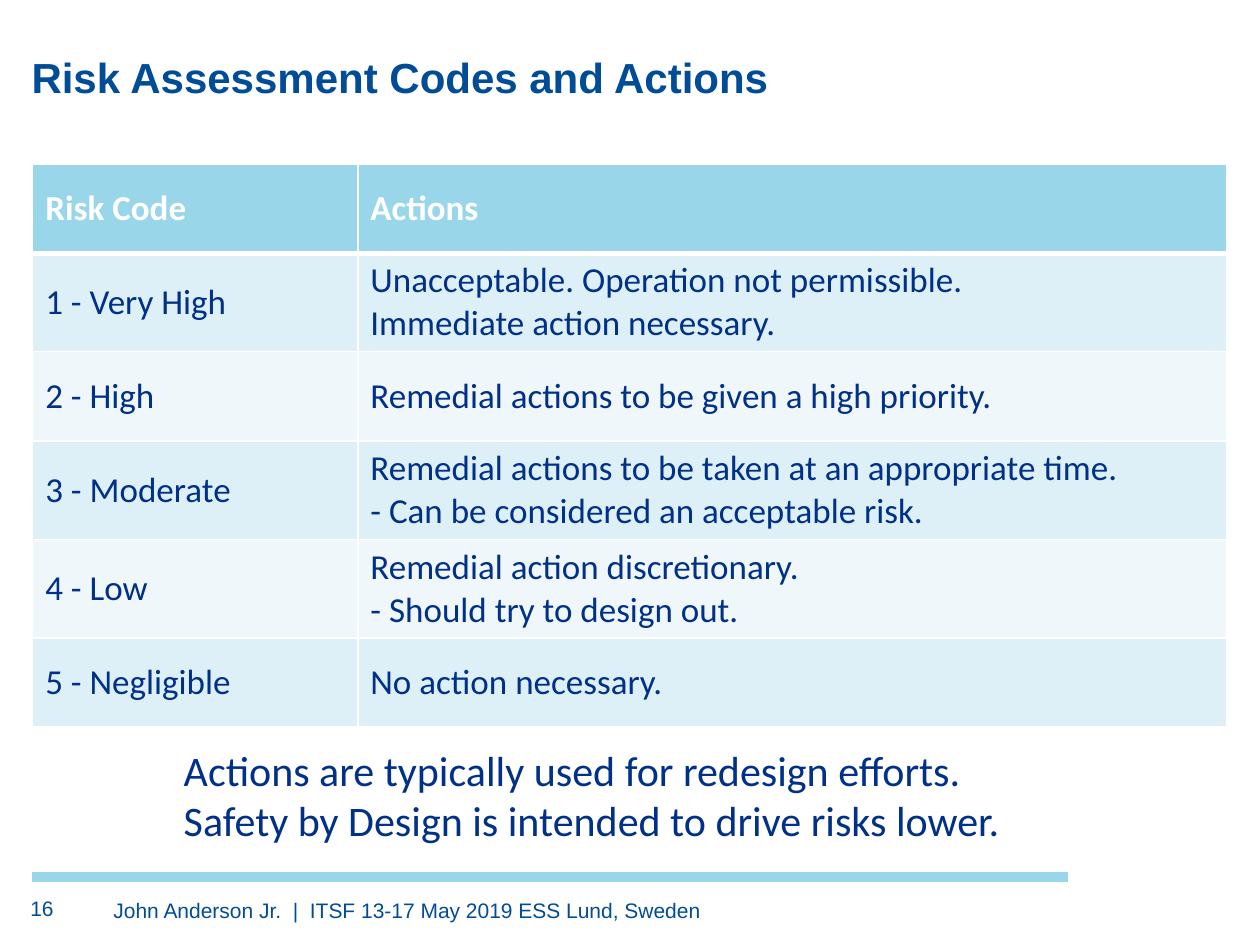
from lxml import etree
from pptx import Presentation
from pptx.dml.color import RGBColor
from pptx.enum.shapes import MSO_CONNECTOR
from pptx.enum.text import MSO_ANCHOR, MSO_AUTO_SIZE, PP_ALIGN
from pptx.oxml.ns import qn
from pptx.util import Inches, Pt

STRAIGHT = MSO_CONNECTOR.STRAIGHT
MIDDLE, BOTTOM = MSO_ANCHOR.MIDDLE, MSO_ANCHOR.BOTTOM
LEFT = PP_ALIGN.LEFT
NO_FIT, GROW = MSO_AUTO_SIZE.NONE, MSO_AUTO_SIZE.SHAPE_TO_FIT_TEXT

BLUE, NAVY, SKY, WHITE = "004C97", "003087", "99D6EA", "FFFFFF"
BANDS = ["DEF0F7", "EFF7FB"]


def rgb(hex_code):
    return RGBColor.from_string(hex_code)


def write(frame, text, size, font, color, bold=False, inset=None):
    frame.text = text
    frame.word_wrap = True
    if inset is not None:
        frame.margin_left = frame.margin_right = inset
        frame.margin_top = frame.margin_bottom = inset
    for paragraph in frame.paragraphs:
        paragraph.alignment = LEFT
        paragraph.font.size = Pt(size)
        paragraph.font.name = font
        paragraph.font.bold = bold
        paragraph.font.color.rgb = rgb(color)


prs = Presentation()
prs.slide_width, prs.slide_height = Inches(10), Inches(7.5)
slide = prs.slides.add_slide(prs.slide_layouts[5])
margin, content_width = Inches(0.25), Inches(9.48)

# Footer rule
rule = slide.shapes.add_connector(STRAIGHT, margin, Inches(6.96), Inches(8.48), Inches(6.96))
rule.line.color.rgb = rgb(SKY)
rule.line.width = Pt(6)
etree.SubElement(rule._element.spPr, qn("a:effectLst"))

# Title
title = slide.shapes.title
title.left, title.top = margin, Inches(0.11)
title.width, title.height = content_width, Inches(0.7)
write(title.text_frame, "Risk Assessment Codes and Actions", 24, "Arial", BLUE, True, 0)
title.text_frame.vertical_anchor = BOTTOM
title.text_frame.auto_size = NO_FIT

# Risk table: \v breaks a line, \n starts a paragraph
risks = [
    ("Risk Code", "Actions"),
    ("1 - Very High", "Unacceptable. Operation not permissible.\vImmediate action necessary."),
    ("2 - High", "Remedial actions to be given a high priority."),
    ("3 - Moderate", "Remedial actions to be taken at an appropriate time.\v"
                     "- Can be considered an acceptable risk."),
    ("4 - Low", "Remedial action discretionary.\n- Should try to design out."),
    ("5 - Negligible", "No action necessary."),
]
row_height = Inches(0.71)
table = slide.shapes.add_table(len(risks), 2, Inches(0.26), Inches(1.3),
                               content_width, row_height * len(risks)).table
table.columns[0].width = Inches(2.58)
table.columns[1].width = Inches(6.9)
for r, risk in enumerate(risks):
    table.rows[r].height = row_height
    header = r == 0
    borders = {"lnL": 1, "lnR": 1, "lnT": 3 if r == 1 else 1, "lnB": 3 if header else 1}
    for c, text in enumerate(risk):
        cell = table.cell(r, c)
        write(cell.text_frame, text, 20, "Calibri", WHITE if header else NAVY, header)
        cell.vertical_anchor = MIDDLE
        cell_props = cell._tc.get_or_add_tcPr()
        for side, points in borders.items():
            border = etree.SubElement(cell_props, qn(f"a:{side}"), w=str(Pt(points)))
            border_fill = etree.SubElement(border, qn("a:solidFill"))
            etree.SubElement(border_fill, qn("a:srgbClr"), val=WHITE)
        cell.fill.solid()
        cell.fill.fore_color.rgb = rgb(SKY if header else BANDS[(r - 1) % 2])

# Footer: event and page number
footer = [
    (0.9, 7.12, 4.85, "John Anderson Jr.  |  ITSF 13-17 May 2019 ESS Lund, Sweden"),
    (0.24, 7.11, 0.45, "16"),
]
for left, top, width, text in footer:
    entry = slide.shapes.add_textbox(Inches(left), Inches(top), Inches(width), Inches(0.26))
    write(entry.text_frame, text, 12, "Arial", BLUE, inset=0)

# Takeaway
takeaway = slide.shapes.add_textbox(Inches(1.36), Inches(5.86), Inches(7.99), Inches(0.91))
write(takeaway.text_frame,
      "Actions are typically used for redesign efforts.\v"
      "Safety by Design is intended to drive risks lower.", 24, "Calibri", NAVY)
takeaway.text_frame.auto_size = GROW

prs.save("out.pptx")
